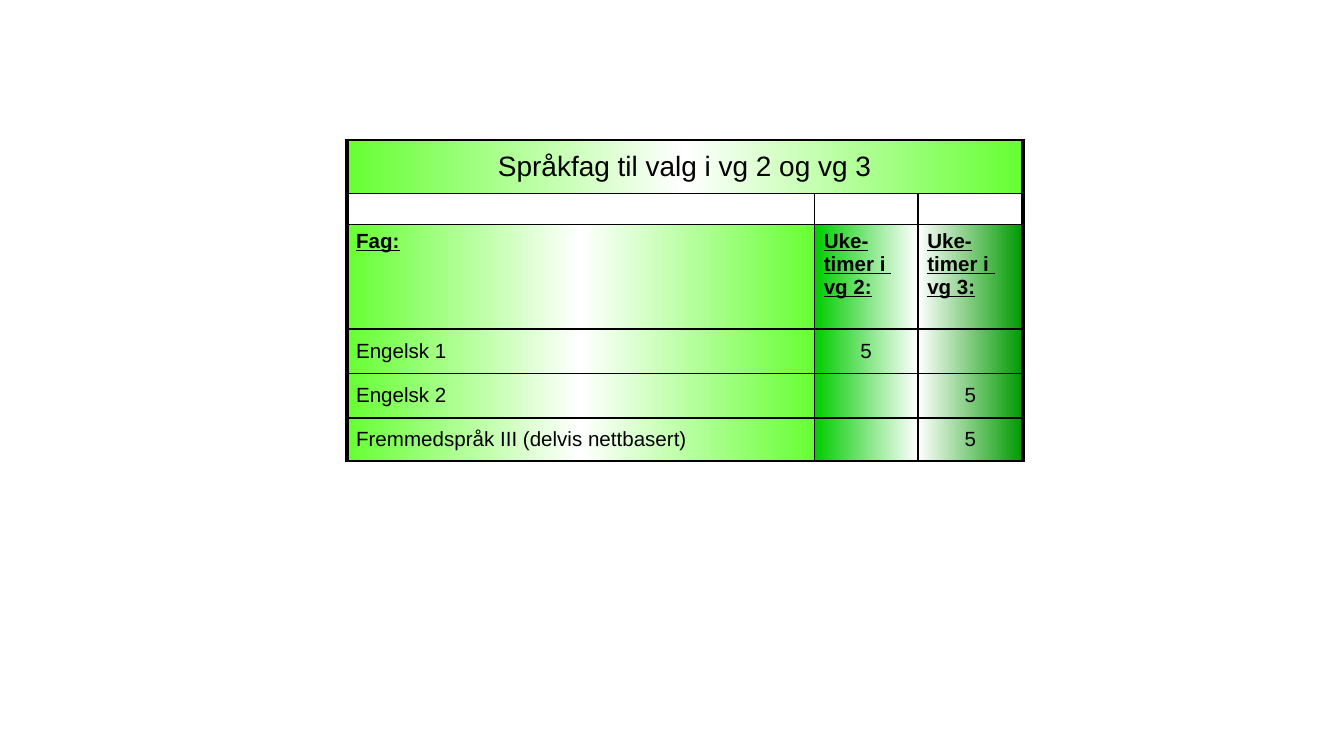
import lxml.etree
import pptx
import pptx.dml.color
import pptx.enum.text
import pptx.oxml.ns
import pptx.util
from pptx.util import Inches

BLACK = "000000"
LIME = [(0, "66FF33"), (50, "FFFFFF"), (100, "66FF33")]
COLUMN_GRADIENTS = [LIME, [(0, "00CC00"), (100, "FFFFFF")], [(0, "FFFFFF"), (100, "009900")]]
COLUMN_WIDTHS = [3.48, 0.77, 0.78]
ROW_HEIGHTS = [0.4, 0.23, 0.78, 0.33, 0.33, 0.32]
ROWS = [
    ["Språkfag til valg i vg 2 og vg 3", "", ""],
    ["", "", ""],
    ["Fag:", "Uke-timer i  vg 2:", "Uke-timer i  vg 3:"],
    ["Engelsk 1", "5", ""],
    ["Engelsk 2", "", "5"],
    ["Fremmedspråk III (delvis nettbasert)", "", "5"],
]
TITLE_ROW, SPACER_ROW, HEADER_ROW = 0, 1, 2


def rgb(value):
    return pptx.dml.color.RGBColor.from_string(value)


def add_xml(parent, tag, **attributes):
    element = lxml.etree.SubElement(parent, pptx.oxml.ns.qn(tag))
    for name, value in attributes.items():
        element.set(name, str(value))
    return element


def write_text(cell, text, size=11, bold=False, underline=False, centred=False, middle=True):
    cell.margin_left = cell.margin_right = Inches(0.07)
    cell.margin_top = cell.margin_bottom = Inches(0.04)
    anchors = pptx.enum.text.MSO_ANCHOR
    cell.vertical_anchor = anchors.MIDDLE if middle else anchors.TOP
    paragraph = cell.text_frame.paragraphs[0]
    if not text:
        # A small end mark keeps empty rows from growing
        add_xml(paragraph._p, "a:endParaRPr", sz=800)
        return
    alignments = pptx.enum.text.PP_ALIGN
    paragraph.alignment = alignments.CENTER if centred else alignments.LEFT
    run = paragraph.add_run()
    run.text = text
    run.font.name = "Arial"
    run.font.size = pptx.util.Pt(size)
    run.font.bold = bold
    run.font.underline = underline
    run.font.color.rgb = rgb(BLACK)


def draw_borders(cell, left=1, right=1, top=1, bottom=1):
    properties = cell._tc.get_or_add_tcPr()
    for side, width in (("L", left), ("R", right), ("T", top), ("B", bottom)):
        line = add_xml(properties, f"a:ln{side}", w=pptx.util.Pt(width))
        add_xml(add_xml(line, "a:solidFill"), "a:srgbClr", val=BLACK)


def fill_gradient(cell, stops):
    gradient = add_xml(cell._tc.get_or_add_tcPr(), "a:gradFill", rotWithShape=1)
    stop_list = add_xml(gradient, "a:gsLst")
    for position, colour in stops:
        stop = add_xml(stop_list, "a:gs", pos=position * 1000)
        add_xml(stop, "a:srgbClr", val=colour)
    add_xml(gradient, "a:lin", ang=0, scaled=1)


def add_subject_table(slide):
    frame = slide.shapes.add_table(
        len(ROWS), len(COLUMN_WIDTHS), Inches(2.58), Inches(1.04),
        Inches(sum(COLUMN_WIDTHS)), Inches(sum(ROW_HEIGHTS)))
    subjects = frame.table
    subjects.first_row = subjects.horz_banding = False
    for column, width in zip(subjects.columns, COLUMN_WIDTHS):
        column.width = Inches(width)
    for row, height in zip(subjects.rows, ROW_HEIGHTS):
        row.height = Inches(height)
    subjects.cell(TITLE_ROW, 0).merge(subjects.cell(TITLE_ROW, 2))

    for r, texts in enumerate(ROWS):
        for c, text in enumerate(texts):
            cell = subjects.cell(r, c)
            is_title, is_header = r == TITLE_ROW, r == HEADER_ROW
            write_text(cell, text, size=15 if is_title else 11,
                       bold=is_header, underline=is_header,
                       centred=is_title or (c > 0 and not is_header),
                       middle=not is_header)
            # The outer left and right edges are heavier
            draw_borders(cell, left=2.25 if c == 0 else 1,
                         right=2.25 if c == 2 or (is_title and c == 0) else 1)
            if r == SPACER_ROW:
                cell.fill.background()
            else:
                fill_gradient(cell, LIME if is_title else COLUMN_GRADIENTS[c])


def main():
    presentation = pptx.Presentation()
    # Widescreen, 16:9
    presentation.slide_width = Inches(10)
    presentation.slide_height = presentation.slide_width * 9 // 16
    # Blank layout: the heading is part of the table
    slide = presentation.slides.add_slide(presentation.slide_layouts[6])
    add_subject_table(slide)
    presentation.save("out.pptx")


if __name__ == "__main__":
    main()
